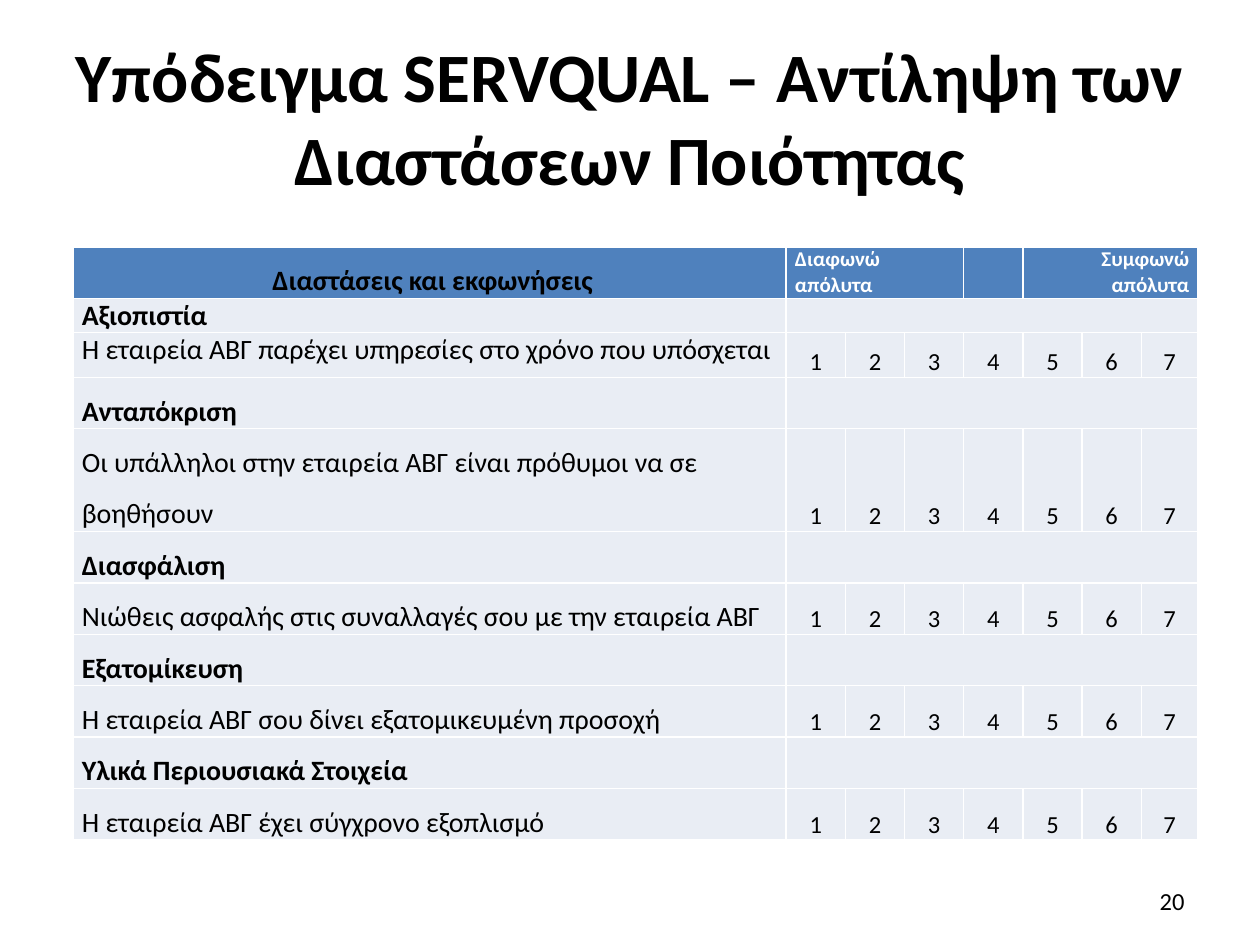
from pptx import Presentation
from pptx.dml.color import RGBColor
from pptx.enum.text import MSO_ANCHOR, MSO_AUTO_SIZE, PP_ALIGN
from pptx.util import Inches, Pt

BLACK = RGBColor(0x00, 0x00, 0x00)
WHITE = RGBColor(0xFF, 0xFF, 0xFF)
HEADER_BLUE = RGBColor(0x4F, 0x81, 0xBD)
PALE_BLUE = RGBColor(0xE9, 0xED, 0xF4)

COLUMN_WIDTHS = [5.66] + [0.47] * 6 + [0.45]
ROW_HEIGHTS = [0.36, 0.27, 0.31, 0.27, 0.67, 0.37, 0.3, 0.38, 0.33, 0.37, 0.39]
DIMENSIONS = [
    ("Αξιοπιστία", "Η εταιρεία ΑΒΓ παρέχει υπηρεσίες στο χρόνο που υπόσχεται"),
    ("Ανταπόκριση", "Οι υπάλληλοι στην εταιρεία ΑΒΓ είναι πρόθυμοι να σε βοηθήσουν"),
    ("Διασφάλιση", "Νιώθεις ασφαλής στις συναλλαγές σου με την εταιρεία ΑΒΓ"),
    ("Εξατομίκευση", "Η εταιρεία ΑΒΓ σου δίνει εξατομικευμένη προσοχή"),
    ("Υλικά Περιουσιακά Στοιχεία", "Η εταιρεία ΑΒΓ έχει σύγχρονο εξοπλισμό"),
]


def write(frame, text, size, align=PP_ALIGN.LEFT, bold=False, color=BLACK, spacing=None):
    frame.text = text
    for paragraph in frame.paragraphs:
        paragraph.alignment = align
        paragraph.line_spacing = spacing
        paragraph.font.name = "Calibri"
        paragraph.font.size = Pt(size)
        paragraph.font.bold = bold
        paragraph.font.color.rgb = color


presentation = Presentation()
presentation.slide_width = Inches(10)
presentation.slide_height = Inches(7.5)
slide = presentation.slides.add_slide(presentation.slide_layouts[5])

# Title
title = slide.shapes.title
title.left, title.top = Inches(0.5), Inches(0.3)
title.width, title.height = Inches(9), Inches(1.25)
title.text_frame.auto_size = MSO_AUTO_SIZE.NONE
title.text_frame.vertical_anchor = MSO_ANCHOR.MIDDLE
write(title.text_frame, "Υπόδειγμα SERVQUAL – Αντίληψη των Διαστάσεων Ποιότητας",
      39.6, PP_ALIGN.CENTER, bold=True)

# Questionnaire grid
questionnaire = slide.shapes.add_table(
    len(ROW_HEIGHTS), len(COLUMN_WIDTHS),
    Inches(0.58), Inches(1.96), Inches(8.92), Inches(4.42)).table
questionnaire.horz_banding = False
for column, width in zip(questionnaire.columns, COLUMN_WIDTHS):
    column.width = Inches(width)
for row_index, height in enumerate(ROW_HEIGHTS):
    row = questionnaire.rows[row_index]
    row.height = Inches(height)
    for cell in row.cells:
        cell.margin_left = cell.margin_right = Inches(0.07)
        cell.margin_top = cell.margin_bottom = 0
        cell.fill.solid()
        cell.fill.fore_color.rgb = PALE_BLUE if row_index else HEADER_BLUE
        write(cell.text_frame, "", 14)

# Header row
for first, last in [(1, 3), (5, 7)]:
    questionnaire.cell(0, first).merge(questionnaire.cell(0, last))
write(questionnaire.cell(0, 0).text_frame, " Διαστάσεις και εκφωνήσεις",
      16, PP_ALIGN.CENTER, bold=True, spacing=1.5)
write(questionnaire.cell(0, 1).text_frame, "Διαφωνώ\nαπόλυτα",
      12, PP_ALIGN.JUSTIFY, bold=True, color=WHITE)
write(questionnaire.cell(0, 5).text_frame, "Συμφωνώ\nαπόλυτα",
      12, PP_ALIGN.RIGHT, bold=True, color=WHITE)

# Each dimension: a heading row, then a statement with its 1–7 scale
for index, (dimension, statement) in enumerate(DIMENSIONS):
    heading_row = 1 + 2 * index
    statement_row = heading_row + 1
    spacing = 1.5 if index else None
    questionnaire.cell(heading_row, 1).merge(questionnaire.cell(heading_row, 7))
    write(questionnaire.cell(heading_row, 0).text_frame, dimension, 16,
          bold=True, spacing=spacing)
    write(questionnaire.cell(statement_row, 0).text_frame, statement, 16, spacing=spacing)
    for score in range(1, 8):
        score_cell = questionnaire.cell(statement_row, score)
        score_cell.vertical_anchor = MSO_ANCHOR.BOTTOM
        write(score_cell.text_frame, str(score), 14, PP_ALIGN.CENTER, spacing=1.5)

# Page number
page_number = slide.shapes.add_textbox(Inches(7.17), Inches(6.95), Inches(2.33), Inches(0.4))
page_number.text_frame.word_wrap = True
page_number.text_frame.vertical_anchor = MSO_ANCHOR.MIDDLE
write(page_number.text_frame, "20", 14, PP_ALIGN.RIGHT)

presentation.save("out.pptx")
